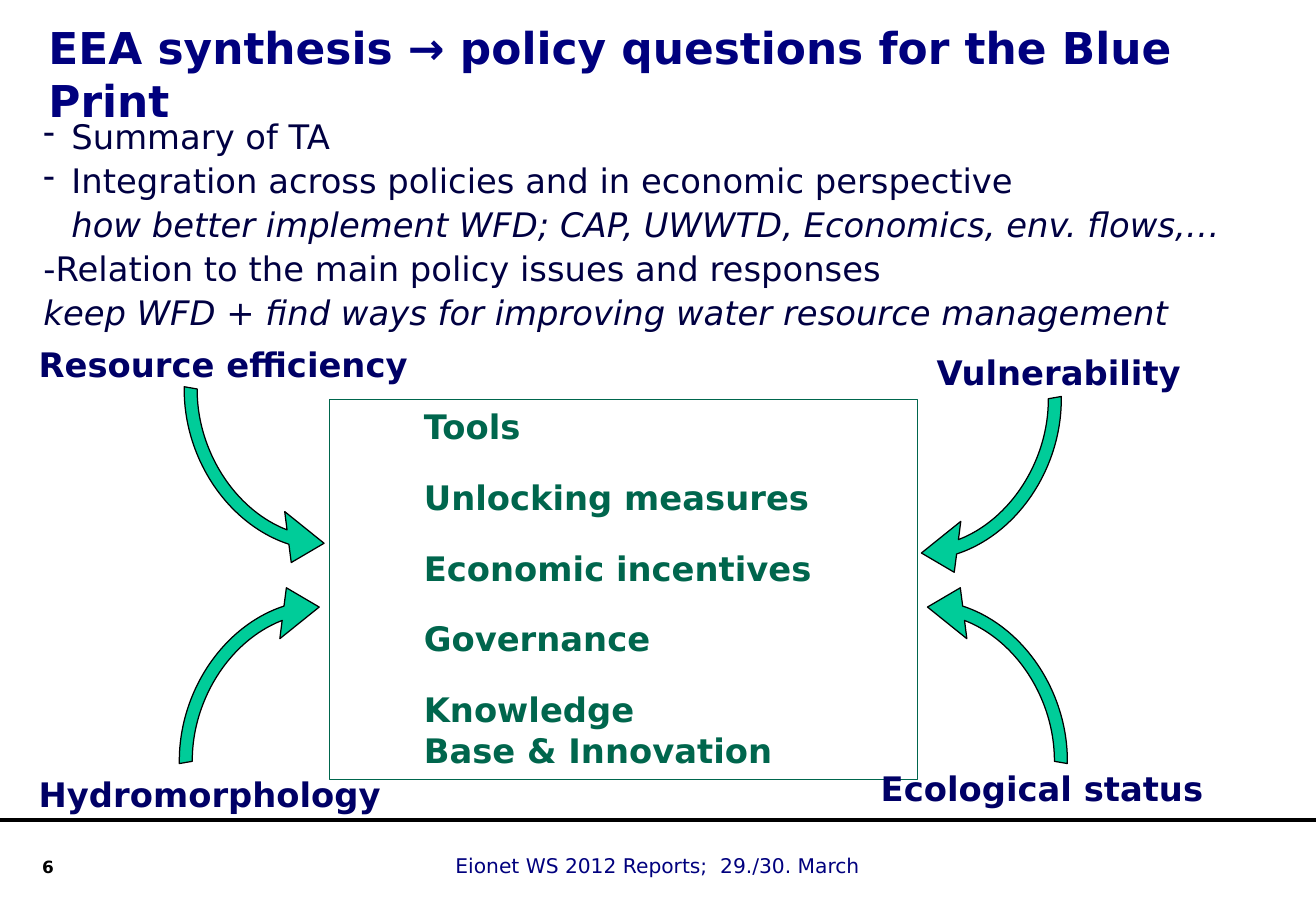
from dataclasses import dataclass

from lxml import etree
from pptx import Presentation
from pptx.dml.color import RGBColor
from pptx.enum.shapes import MSO_CONNECTOR, MSO_SHAPE
from pptx.enum.text import MSO_ANCHOR, PP_ALIGN
from pptx.oxml.ns import qn
from pptx.util import Inches, Pt

STRAIGHT = MSO_CONNECTOR.STRAIGHT
RECTANGLE = MSO_SHAPE.RECTANGLE
CIRCULAR_ARROW = MSO_SHAPE.CIRCULAR_ARROW
TOP, MIDDLE = MSO_ANCHOR.TOP, MSO_ANCHOR.MIDDLE
LEFT, RIGHT = PP_ALIGN.LEFT, PP_ALIGN.RIGHT


@dataclass(frozen=True)
class Theme:
    font: str = "DejaVu Sans"
    title: RGBColor = RGBColor(0x00, 0x00, 0x7E)
    body: RGBColor = RGBColor(0x00, 0x00, 0x42)
    label: RGBColor = RGBColor(0x00, 0x00, 0x66)
    tool: RGBColor = RGBColor(0x00, 0x66, 0x4D)
    arrow: RGBColor = RGBColor(0x00, 0xCC, 0x99)
    black: RGBColor = RGBColor(0x00, 0x00, 0x00)
    title_size: int = 26
    body_size: int = 20
    footer_size: int = 12
    number_size: int = 10


THEME = Theme()
SLIDE_WIDTH, SLIDE_HEIGHT = 10.83, 7.5
ARROW_SIZE = (2.69, 2.27)
ARROW_ADJUSTMENTS = (0.047, 9.405, 197.917, 142.803, 0.093)

SUMMARY = [
    ("Summary of TA", True),
    ("Integration across policies and in economic perspective\v"
     "how better implement WFD; CAP, UWWTD, Economics, env. flows,…", True),
    ("-Relation to the main policy issues and responses\v"
     "keep WFD + find ways for improving water resource management", False),
]
TOOLS = ["Tools", "Unlocking measures", "Economic incentives", "Governance",
         "Knowledge\vBase & Innovation"]
LABELS = [
    ("Resource efficiency", (0.22, 2.78, 3.4, 0.42)),
    ("Vulnerability", (7.61, 2.85, 2.4, 0.42)),
    ("Hydromorphology", (0.22, 6.32, 3.2, 0.42)),
    ("Ecological status", (7.15, 6.27, 3.1, 0.42)),
]
ARROWS = [
    (1.14, 4.97, 291.8, ()),
    (6.38, 2.31, 291.8, ("flipH", "flipV")),
    (1.18, 2.23, 68.2, ("flipV",)),
    (6.43, 4.97, 68.2, ("flipH",)),
]


def format_runs(paragraph, size, color, bold=False):
    for run in paragraph.runs:
        run.font.name = THEME.font
        run.font.size = Pt(size)
        run.font.bold = bold
        run.font.color.rgb = color


def add_text(slide, box, text, size, color, bold=False, anchor=TOP, align=LEFT):
    shape = slide.shapes.add_textbox(*map(Inches, box))
    frame = shape.text_frame
    frame.word_wrap = True
    frame.vertical_anchor = anchor
    frame.text = text
    paragraph = frame.paragraphs[0]
    paragraph.alignment = align
    format_runs(paragraph, size, color, bold)


def fill_paragraphs(frame, texts):
    frame.text = "\n".join(texts)
    frame.word_wrap = True
    frame.vertical_anchor = TOP
    return frame.paragraphs


def set_indent(paragraph, margin, first_line=0):
    properties = paragraph._p.get_or_add_pPr()
    properties.set("marL", str(Inches(margin)))
    properties.set("indent", str(Inches(first_line)))
    return properties


def add_footer(slide, box):
    left, top, width, height = box
    line = slide.shapes.add_connector(
        STRAIGHT, Inches(left), Inches(top), Inches(left + width), Inches(top))
    line.line.color.rgb = THEME.black
    line.line.width = Pt(2.25)
    etree.SubElement(line._element.spPr, qn("a:effectLst"))
    add_text(slide, (left + 3.65, top + 0.23, 3.9, 0.3),
             "Eionet WS 2012 Reports;  29./30. March",
             THEME.footer_size, THEME.title)
    add_text(slide, (left, top + 0.25, 0.54, 0.5), "6",
             THEME.number_size, THEME.black, bold=True, align=RIGHT)


def add_summary(slide, box):
    frame = slide.shapes.add_textbox(*map(Inches, box)).text_frame
    paragraphs = fill_paragraphs(frame, [text for text, _ in SUMMARY])
    for paragraph, (_, bulleted) in zip(paragraphs, SUMMARY):
        if bulleted:
            properties = set_indent(paragraph, 0.23, -0.23)
            etree.SubElement(properties, qn("a:buChar")).set("char", "-")
        paragraph.line_spacing = Pt(26)
        format_runs(paragraph, THEME.body_size, THEME.body)
        for run in paragraph.runs[1:]:
            run.font.italic = True


def add_tools(slide, box):
    shape = slide.shapes.add_shape(RECTANGLE, *map(Inches, box))
    shape.shadow.inherit = False
    shape.fill.background()
    shape.line.color.rgb = THEME.tool
    shape.line.width = Pt(0.75)
    for index, paragraph in enumerate(fill_paragraphs(shape.text_frame, TOOLS)):
        set_indent(paragraph, 0.68)
        paragraph.alignment = LEFT
        paragraph.space_before = Pt(12 if index else 0)
        paragraph.space_after = Pt(6)
        format_runs(paragraph, THEME.body_size, THEME.tool, bold=True)


def add_curved_arrow(slide, box, rotation, flips):
    shape = slide.shapes.add_shape(CIRCULAR_ARROW, *map(Inches, box))
    shape.shadow.inherit = False
    shape.fill.solid()
    shape.fill.fore_color.rgb = THEME.arrow
    shape.line.color.rgb = THEME.black
    shape.line.width = Pt(0.75)
    for index, value in enumerate(ARROW_ADJUSTMENTS):
        shape.adjustments[index] = value
    shape.rotation = rotation
    transform = shape._element.spPr.find(qn("a:xfrm"))
    for flip in flips:
        transform.set(flip, "1")


def build_slide(presentation):
    slide = presentation.slides.add_slide(presentation.slide_layouts[6])
    add_footer(slide, (0, 6.75, SLIDE_WIDTH, 0.75))
    add_text(slide, (0.3, 0, 10.53, 1.21),
             "EEA synthesis → policy questions for the Blue Print",
             THEME.title_size, THEME.title, bold=True, anchor=MIDDLE)
    add_tools(slide, (2.71, 3.29, 4.84, 3.13))
    for text, box in LABELS:
        add_text(slide, box, text, THEME.body_size, THEME.label, bold=True)
    for left, top, rotation, flips in ARROWS:
        add_curved_arrow(slide, (left, top, *ARROW_SIZE), rotation, flips)
    add_summary(slide, (0.26, 0.88, 10.36, 1.92))


def main():
    presentation = Presentation()
    presentation.slide_width = Inches(SLIDE_WIDTH)
    presentation.slide_height = Inches(SLIDE_HEIGHT)
    build_slide(presentation)
    presentation.save("out.pptx")


if __name__ == "__main__":
    main()
